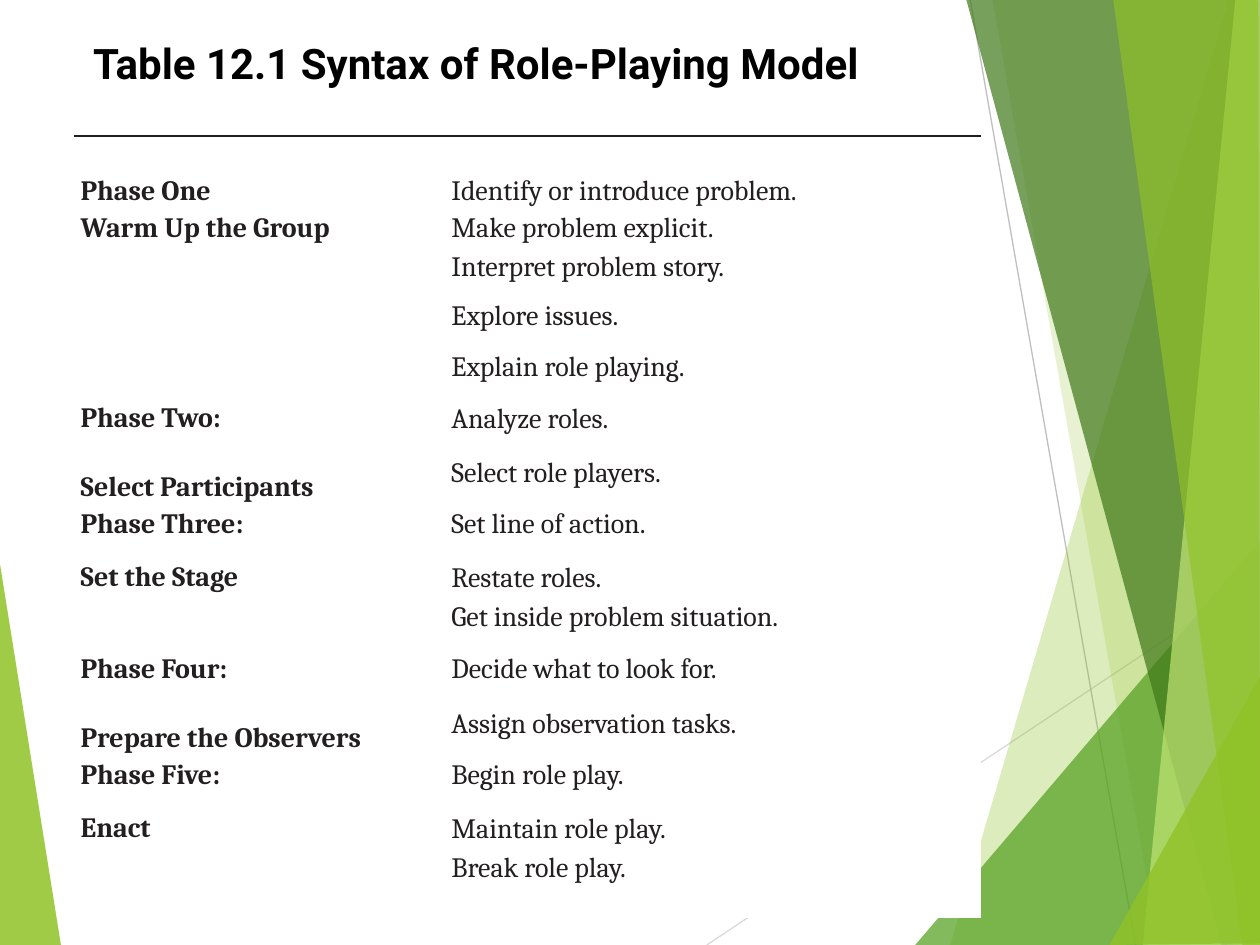
import pptx
import pptx.util
import pptx.dml.color
import pptx.enum.shapes
import pptx.enum.text
import pptx.oxml.ns
import lxml.etree

Pt = pptx.util.Pt
RGBColor = pptx.dml.color.RGBColor
qn = pptx.oxml.ns.qn

BLACK = RGBColor(0x00, 0x00, 0x00)
WHITE = RGBColor(0xFF, 0xFF, 0xFF)
INK = RGBColor(0x23, 0x1F, 0x20)
LIME = RGBColor(0x90, 0xC2, 0x26)
GREEN = RGBColor(0x54, 0xA0, 0x21)
DARK = RGBColor(0x3F, 0x78, 0x19)
PALE = RGBColor(0xC0, 0xE4, 0x74)
SILVER = RGBColor(0xD9, 0xD9, 0xD9)
GRAY = RGBColor(0xBF, 0xBF, 0xBF)

TITLE = "Table 12.1 Syntax of Role-Playing Model"
WEDGE = (LIME, 85, [(-0.7, 316.1), (35.3, 540.7), (-0.7, 540)])
RAYS = [
    (SILVER, (403.9, 540), (720.7, 329)),
    (GRAY, (554.4, 0), (648.9, 540)),
]
BANDS = [
    (LIME, 30, [(702, 0), (542.9, 540), (721.4, 540.7), (720.7, 0.7)]),
    (LIME, 20, [(567.4, -0.7), (661.7, 540), (720.7, 540), (720.7, -0.7)]),
    (GREEN, 72, [(522.7, 540), (720, 308.9), (720.7, 540)]),
    (DARK, 70, [(552.2, -0.7), (698.4, 540), (720.7, 539.3), (720.7, -0.7)]),
    (PALE, 70, [(706.3, -0.7), (653, 540), (720.7, 540), (720, -0.7)]),
    (LIME, 65, [(635.8, -0.7), (709.9, 540), (720, 540), (718.6, -0.7)]),
    (LIME, 80, [(634.3, 540), (720.7, 385.2), (720.7, 539.3)]),
]

ROWS = [
    (51, ("Phase One", Pt(10.7), 4.2), ("Identify or introduce problem.", Pt(11), 3.9)),
    (22.3, ("Warm Up the Group", Pt(10.8), 0.3), ("Make problem explicit.", Pt(11.1), 0)),
    (28.1, None, ("Interpret problem story.", Pt(11), 0)),
    (28.1, None, ("Explore issues.", Pt(11), 0)),
    (30.3, None, ("Explain role playing.", Pt(11.6), 0)),
    (30.3, ("Phase Two:", Pt(10.7), 4.6), ("Analyze roles.", Pt(11), 4.2)),
    (30.3, ("Select Participants", 1.07, 0.3), ("Select role players.", Pt(11.7), 0)),
    (30.3, ("Phase Three:", Pt(10.7), 4.6), ("Set line of action.", Pt(11), 4.2)),
    (22.3, ("Set the Stage", Pt(10.8), 0.3), ("Restate roles.", Pt(11.1), 0)),
    (30.3, None, ("Get inside problem situation.", Pt(11.6), 0)),
    (30.3, ("Phase Four:", Pt(10.7), 4.6), ("Decide what to look for.", Pt(11), 4.2)),
    (30.3, ("Prepare the Observers", 1.07, 0.3), ("Assign observation tasks.", Pt(11.7), 0)),
    (30.3, ("Phase Five:", Pt(10.7), 4.6), ("Begin role play.", Pt(11), 4.2)),
    (22.3, ("Enact", Pt(10.8), 0.3), ("Maintain role play.", Pt(11.1), 0)),
    (30.3, None, ("Break role play.", Pt(11.6), 0)),
]
COLS = [(203.8, 4.1, True), (314.6, 12.2, False)]
HEAD_GAP = 29.8


def add_band(slide, color, alpha, points):
    pen = slide.shapes.build_freeform(*points[0], scale=Pt(1))
    pen.add_line_segments(points[1:])
    band = pen.convert_to_shape()
    band.shadow.inherit = False
    band.line.fill.background()
    band.fill.solid()
    band.fill.fore_color.rgb = color
    tint = band.fill._xPr.find(".//" + qn("a:srgbClr"))
    lxml.etree.SubElement(tint, qn("a:alpha")).set("val", str(alpha * 1000))


def add_ray(slide, color, start, end):
    ends = [Pt(v) for v in start + end]
    ray = slide.shapes.add_connector(pptx.enum.shapes.MSO_CONNECTOR.STRAIGHT, *ends)
    ray.line.color.rgb = color
    ray.line.width = Pt(0.75)
    lxml.etree.SubElement(ray._element.spPr, qn("a:effectLst"))


def set_edges(cell, ruled):
    props = cell._tc.get_or_add_tcPr()
    for i, side in enumerate("LRTB"):
        edge = lxml.etree.Element(qn("a:ln" + side))
        if ruled and side == "T":
            edge.set("w", str(Pt(1)))
            fill = lxml.etree.SubElement(edge, qn("a:solidFill"))
            lxml.etree.SubElement(fill, qn("a:srgbClr")).set("val", str(INK))
        else:
            edge.set("w", "0")
            lxml.etree.SubElement(edge, qn("a:noFill"))
        props.insert(i, edge)


def fill_cell(cell, entry, indent, bold):
    cell.margin_left = cell.margin_right = cell.margin_top = cell.margin_bottom = 0
    cell.fill.solid()
    cell.fill.fore_color.rgb = WHITE
    if entry is None:
        return
    text, pitch, before = entry
    cell.text = text
    para = cell.text_frame.paragraphs[0]
    para.line_spacing = pitch
    para.space_before = Pt(before)
    para._p.get_or_add_pPr().set("marL", str(Pt(indent)))
    font = para.font
    font.name, font.size, font.bold = "Cambria", Pt(16), bold
    font.color.rgb = INK


def add_grid(slide):
    wide = sum(col[0] for col in COLS)
    high = sum(row[0] for row in ROWS)
    frame = slide.shapes.add_table(
        len(ROWS), len(COLS), Pt(42), Pt(77.8), Pt(wide), Pt(high))
    grid = frame.table
    grid.first_row = grid.horz_banding = False
    for c, (width, indent, bold) in enumerate(COLS):
        grid.columns[c].width = Pt(width)
        for r, row in enumerate(ROWS):
            grid.rows[r].height = Pt(row[0])
            cell = grid.cell(r, c)
            fill_cell(cell, row[c + 1], indent, bold)
            set_edges(cell, r == 0)
        grid.cell(0, c).margin_top = Pt(HEAD_GAP)


def set_title(slide):
    title = slide.shapes.title
    title.left, title.top = Pt(46), Pt(18)
    title.width, title.height = Pt(479), Pt(42)
    title.text = TITLE
    title.text_frame.vertical_anchor = pptx.enum.text.MSO_ANCHOR.TOP
    para = title.text_frame.paragraphs[0]
    para.alignment = pptx.enum.text.PP_ALIGN.LEFT
    para.font.name, para.font.size, para.font.bold = "Roboto", Pt(24), True
    para.font.color.rgb = BLACK


def main():
    deck = pptx.Presentation()
    deck.slide_width, deck.slide_height = Pt(720), Pt(540)
    slide = deck.slides.add_slide(deck.slide_layouts[5])
    set_title(slide)
    add_band(slide, *WEDGE)
    for ray in RAYS:
        add_ray(slide, *ray)
    for band in BANDS:
        add_band(slide, *band)
    add_grid(slide)
    deck.save("out.pptx")


if __name__ == "__main__":
    main()
